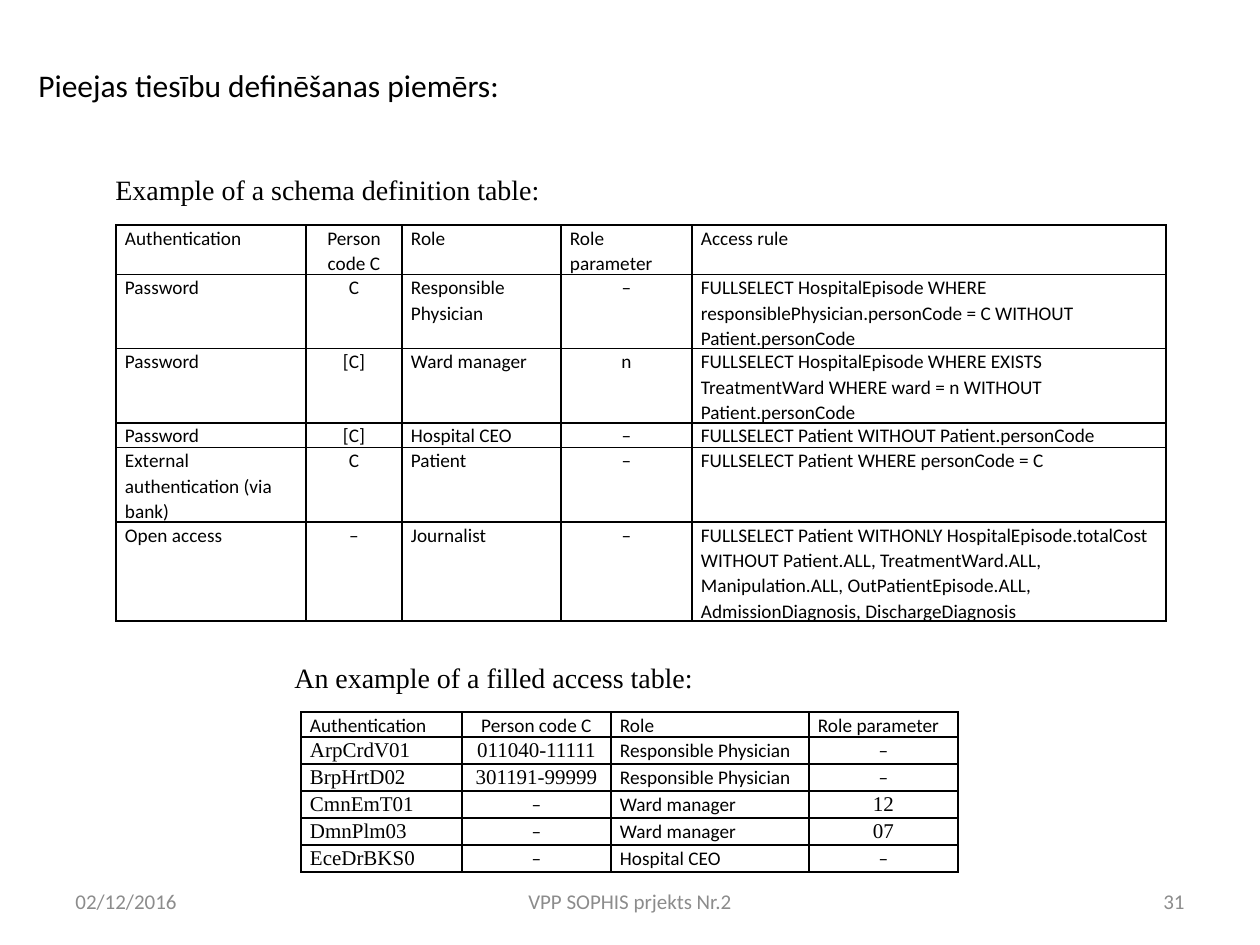
from dataclasses import dataclass
from lxml.etree import SubElement
from pptx import Presentation
from pptx.dml.color import RGBColor as Rgb
from pptx.enum.text import MSO_ANCHOR as Anchor, MSO_AUTO_SIZE as Auto, PP_ALIGN as Align
from pptx.oxml.ns import qn
from pptx.util import Emu, Pt


@dataclass(frozen=True)
class Theme:
    ink: str = "000000"
    grey: str = "8C8C8C"
    sans: str = "Calibri"
    serif: str = "Times New Roman"
    title: int = 18
    caption: int = 16
    code: int = 12
    cell: int = 11
    foot: int = 12
    rule: int = 1
    leading: float = 1.07


THEME = Theme()
LINE = 25  # least height of a table row

RULES = [
    ["Authentication", "Person code C", "Role", "Role parameter", "Access rule"],
    ["Password", "C", "Responsible Physician", "–",
     "FULLSELECT HospitalEpisode WHERE responsiblePhysician.personCode = C "
     "WITHOUT Patient.personCode"],
    ["Password", "[C]", "Ward manager", "n",
     "FULLSELECT HospitalEpisode WHERE EXISTS TreatmentWard WHERE ward = n "
     "WITHOUT Patient.personCode"],
    ["Password", "[C]", "Hospital CEO", "–",
     "FULLSELECT Patient WITHOUT Patient.personCode"],
    ["External authentication (via bank)", "C", "Patient", "–",
     "FULLSELECT Patient WHERE personCode = C"],
    ["Open access", "–", "Journalist", "–",
     "FULLSELECT Patient WITHONLY HospitalEpisode.totalCost WITHOUT Patient.ALL, "
     "TreatmentWard.ALL, Manipulation.ALL, OutPatientEpisode.ALL, "
     "AdmissionDiagnosis, DischargeDiagnosis"],
]
ACCESS = [
    ["Authentication", "Person code C", "Role", "Role parameter"],
    ["ArpCrdV01", "011040-11111", "Responsible Physician", "–"],
    ["BrpHrtD02", "301191-99999", "Responsible Physician", "–"],
    ["CmnEmT01", "–", "Ward manager", "12"],
    ["DmnPlm03", "–", "Ward manager", "07"],
    ["EceDrBKS0", "–", "Hospital CEO", "–"],
]


def px(n):
    return Emu(round(n * 914400 / 126))


def style(para, face, size, color, align=Align.LEFT):
    para.alignment = align
    font = para.font
    font.name, font.size = face, Pt(size)
    font.color.rgb = Rgb.from_string(color)


def label(slide, box, text, face, size, color, align=Align.LEFT,
          anchor=Anchor.MIDDLE, wrap=True, indent=0):
    frame = slide.shapes.add_textbox(*map(px, box)).text_frame
    frame.word_wrap = wrap
    frame.auto_size = Auto.NONE if wrap else Auto.SHAPE_TO_FIT_TEXT
    frame.vertical_anchor = anchor
    para = frame.paragraphs[0]
    para.text = text
    style(para, face, size, color, align)
    if indent:
        para._p.get_or_add_pPr().set("indent", str(px(indent)))


def frame_cell(cell):
    """Rule all four sides of a cell and leave it unfilled."""
    props = cell._tc.get_or_add_tcPr()
    for side in ("lnL", "lnR", "lnT", "lnB"):
        line = SubElement(props, qn(f"a:{side}"), w=str(Pt(THEME.rule)))
        fill = SubElement(line, qn("a:solidFill"))
        SubElement(fill, qn("a:srgbClr"), val=THEME.ink)
    cell.fill.background()


def fill_cell(cell, text, align):
    """Write a cell; values that hold digits are set in the code face."""
    cell.margin_left = cell.margin_right = px(9)
    cell.margin_top = cell.margin_bottom = 0
    para = cell.text_frame.paragraphs[0]
    para.text = text
    para.line_spacing = THEME.leading
    if any(char.isdigit() for char in text):
        style(para, THEME.serif, THEME.code, THEME.ink, align)
    else:
        style(para, THEME.sans, THEME.cell, THEME.ink, align)
    frame_cell(cell)


def grid(slide, left, top, cols, lines, data):
    """Place a table whose rows hold the given numbers of text lines."""
    table = slide.shapes.add_table(
        len(data), len(cols), px(left), px(top),
        px(sum(cols)), px(LINE * sum(lines))).table
    table.first_row = table.horz_banding = False
    for col, width in zip(table.columns, cols):
        col.width = px(width)
    for r, (row, count) in enumerate(zip(data, lines)):
        table.rows[r].height = px(LINE * count - (count > 1))
        for c, text in enumerate(row):
            mid = c == 1 or (c == 3 and r > 0)
            fill_cell(table.cell(r, c), text, Align.CENTER if mid else Align.LEFT)


def section(slide, left, top, width, text, wrap=True):
    label(slide, (left, top, width, 47), text, THEME.serif, THEME.caption,
          THEME.ink, wrap=wrap, indent=30)


def footer(slide, left, top, width, height):
    side, mid = 294, 400
    parts = [
        (left, side, "02/12/2016", Align.LEFT),
        (left + (width - mid) // 2, mid, "VPP SOPHIS prjekts Nr.2", Align.CENTER),
        (left + width - side, side, "31", Align.RIGHT),
    ]
    for x, w, text, align in parts:
        label(slide, (x, top, w, height), text, THEME.sans, THEME.foot,
              THEME.grey, align)


def main():
    deck = Presentation()
    deck.slide_width, deck.slide_height = px(1260), px(945)
    slide = deck.slides.add_slide(deck.slide_layouts[6])
    footer(slide, 63, 876, 1134, 50)
    label(slide, (26, 60, 491, 50), "Pieejas tiesību definēšanas piemērs:",
          THEME.sans, THEME.title, THEME.ink, anchor=Anchor.TOP, wrap=False)
    section(slide, 73, 166, 536, "Example of a schema definition table:")
    grid(slide, 116, 225, [190, 96, 159, 131, 474], [2, 3, 3, 1, 3, 4], RULES)
    section(slide, 252, 654, 460, "An example of a filled access table:", wrap=False)
    grid(slide, 301, 712, [161, 149, 198, 149], [1] * 6, ACCESS)
    deck.save("out.pptx")


if __name__ == "__main__":
    main()
